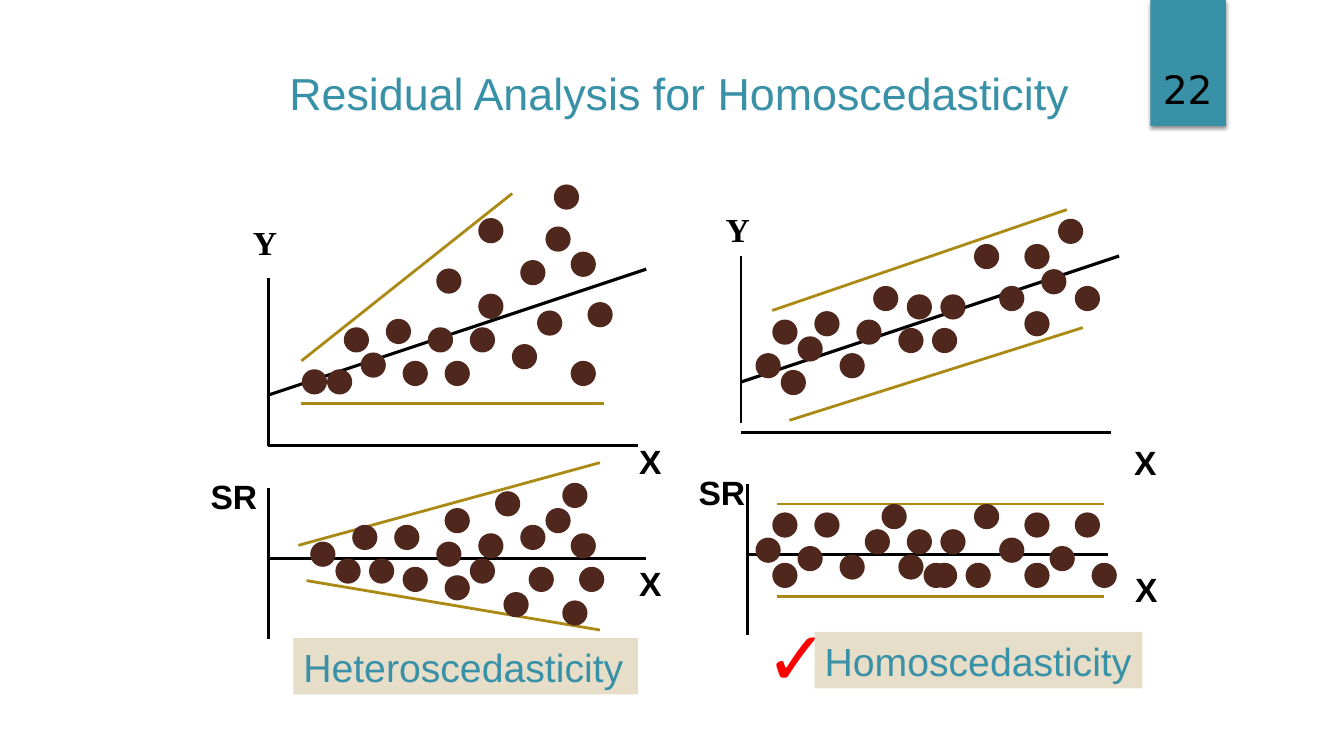
from lxml.etree import SubElement as Sub
from pptx import Presentation
from pptx.dml.color import RGBColor
from pptx.enum.shapes import MSO_CONNECTOR as Link, MSO_SHAPE as Form
from pptx.enum.text import MSO_ANCHOR as Anchor, PP_ALIGN as Align
from pptx.oxml.ns import qn
from pptx.util import Inches, Pt

TEAL = RGBColor.from_string("3891A7")
TAN = RGBColor.from_string("E7DEC9")
GOLD = RGBColor.from_string("AA8A14")
BROWN = RGBColor.from_string("4F271C")
RED = RGBColor.from_string("FF0000")
BLACK = RGBColor.from_string("000000")
STEP = 1 / 12
DOT = 3 * STEP

HEAD = dict(name="Arial", size=Pt(32), color=TEAL)
NAME = dict(HEAD, size=Pt(28))
TICK = dict(HEAD, size=Pt(54), color=RED)
PAGE = dict(name="DejaVu Sans", size=Pt(28), color=BLACK)
AXIS = dict(name="Arial", size=Pt(24), bold=True, color=BLACK)
SERIF = dict(AXIS, name="Times New Roman")

FAN = [[34], [], [], [], [25], [33], [], [], [36], [30], [20], [], [], [25], [38],
       [32], [14], [9, 19, 24], [], [29], [11], [16, 21, 36], [4, 7]]
BAND = [[37], [], [], [27, 33], [], [], [35], [], [15, 30, 39], [19, 23], [],
        [8, 33], [3, 13], [18, 22], [6], [], [1, 11], [], [4]]
FAN_SR = [[35], [27], [], [21, 33], [], [10, 15, 30], [25, 36], [5, 20], [],
          [8, 12, 24], [16, 31, 37], [21], [], [28], [35]]
BAND_SR = [[16, 27], [3, 8, 33, 39], [], [14, 19, 23], [1, 30], [6, 36],
           [11, 18], [3, 21, 22, 26, 33, 41]]


def add_text(slide, box, text, style, align=Align.LEFT, anchor=Anchor.TOP, fill=None):
    """Put one styled line of text in a box."""
    area = slide.shapes.add_textbox(*map(Inches, box))
    if fill is not None:
        area.fill.solid()
        area.fill.fore_color.rgb = fill
    frame = area.text_frame
    frame.word_wrap = True
    frame.vertical_anchor = anchor
    para = frame.paragraphs[0]
    para.alignment = align
    run = para.add_run()
    run.text = text
    for key, value in style.items():
        if key == "color":
            run.font.color.rgb = value
        else:
            setattr(run.font, key, value)


def add_form(slide, form, box, color):
    """Draw a plain filled shape without outline or shadow."""
    shape = slide.shapes.add_shape(form, *map(Inches, box))
    shape.shadow.inherit = False
    shape.fill.solid()
    shape.fill.fore_color.rgb = color
    shape.line.fill.background()
    return shape


def add_lines(slide, box, group, color, width=2):
    """Draw straight lines whose ends are measured from a corner."""
    left, top = box
    for x1, y1, x2, y2 in group:
        ends = left + x1, top + y1, left + x2, top + y2
        line = slide.shapes.add_connector(Link.STRAIGHT, *map(Inches, ends))
        line.line.color.rgb = color
        line.line.width = Pt(width)
        Sub(line._element.spPr, qn("a:effectLst"))


def add_dots(slide, box, rows):
    """Draw dots on a grid, given the filled columns of each row."""
    left, top = box
    for row, cols in enumerate(rows):
        for col in cols:
            spot = left + col * STEP, top + row * STEP, DOT, DOT
            add_form(slide, Form.OVAL, spot, BROWN)


def add_fit(slide, box, rows, peak, bands, mark, lift=0):
    """Draw a fitted scatter sketch up from the left end of its base line."""
    left, base = box
    add_lines(slide, box, [(0, -1.66 - lift, 0, -lift), (0, 0, 3.67, 0)], BLACK)
    add_lines(slide, box, [(0, -0.5, 3.75, -1.75)], BLACK, 2.25)
    add_lines(slide, box, bands, GOLD)
    add_dots(slide, (left + lift * 2 / 3, base - peak), rows)
    add_text(slide, (left - 0.25, base - 2.27, 0.44, 0.5), "Y", SERIF)
    add_text(slide, (left + mark, base - 0.09 + lift * 1.5, 0.51, 0.5), "X", AXIS)


def add_rest(slide, box, rows, peak, bands, span, mark, drop=0):
    """Draw a residual sketch around the left end of its zero line."""
    left, zero = box
    add_lines(slide, box, [(0, -0.7, 0, 0.8), (0, 0, span, 0)], BLACK)
    add_lines(slide, box, bands, GOLD)
    add_dots(slide, (left, zero - peak), rows)
    add_text(slide, (left - 0.67 + drop, zero - 0.87, 0.84, 0.5), "SR", AXIS)
    add_text(slide, (left + mark, zero + drop, 0.51, 0.5), "X", AXIS)


def add_page(slide, box):
    """Draw the page tab with its soft shadow and number."""
    left, top, width, height = box
    tab = add_form(slide, Form.RECTANGLE, box, TEAL)
    glow = tab._element.spPr.find(qn("a:effectLst"))
    cast = Sub(glow, qn("a:outerShdw"), blurRad=str(Pt(3)), dist=str(Pt(2)),
               dir="5400000", algn="t", rotWithShape="0")
    tint = Sub(cast, qn("a:srgbClr"), val="000000")
    Sub(tint, qn("a:alpha"), val="45000")
    add_text(slide, (left - 0.09, top + 0.32, width + 0.17, height - 0.41),
             "22", PAGE, Align.CENTER, Anchor.BOTTOM)


def add_names(slide, box):
    """Place the two captions and the tick along the foot of the slide."""
    left, top = box
    add_text(slide, (left, top + 0.33, 3.42, 0.56), "Heteroscedasticity", NAME, fill=TAN)
    add_text(slide, (left + 4.58, top, 1, 1), "✓", TICK)
    add_text(slide, (left + 5.17, top + 0.27, 3.25, 0.56), "Homoscedasticity", NAME, fill=TAN)


def main():
    """Build the slide and save it."""
    deck = Presentation()
    deck.slide_width, deck.slide_height = Inches(13.33), Inches(7.5)
    slide = deck.slides.add_slide(deck.slide_layouts[6])
    add_page(slide, (11.41, 0, 0.75, 1.25))
    add_text(slide, (2.64, 0.56, 8.2, 0.67), "Residual Analysis for Homoscedasticity",
             HEAD, Align.CENTER, Anchor.BOTTOM)
    add_names(slide, (2.91, 6))
    add_rest(slide, (2.66, 5.54), FAN_SR, 0.75,
             [(0.3, -0.13, 3.29, -0.95), (0.38, 0.22, 3.29, 0.71)], 3.75, 3.58)
    add_rest(slide, (7.41, 5.5), BAND_SR, 0.5,
             [(0.3, y, 3.54, y) for y in (-0.5, 0.42)], 3.58, 3.75, drop=0.09)
    add_fit(slide, (2.66, 4.42), FAN, 2.59,
            [(0.33, -0.84, 2.42, -2.5), (0.33, -0.42, 3.33, -0.42)], 3.58)
    add_fit(slide, (7.35, 4.29), BAND, 2.12,
            [(0.31, -1.21, 3.23, -2.21), (0.48, -0.12, 3.39, -1.04)], 3.8, lift=0.09)
    deck.save("out.pptx")


if __name__ == "__main__":
    main()
